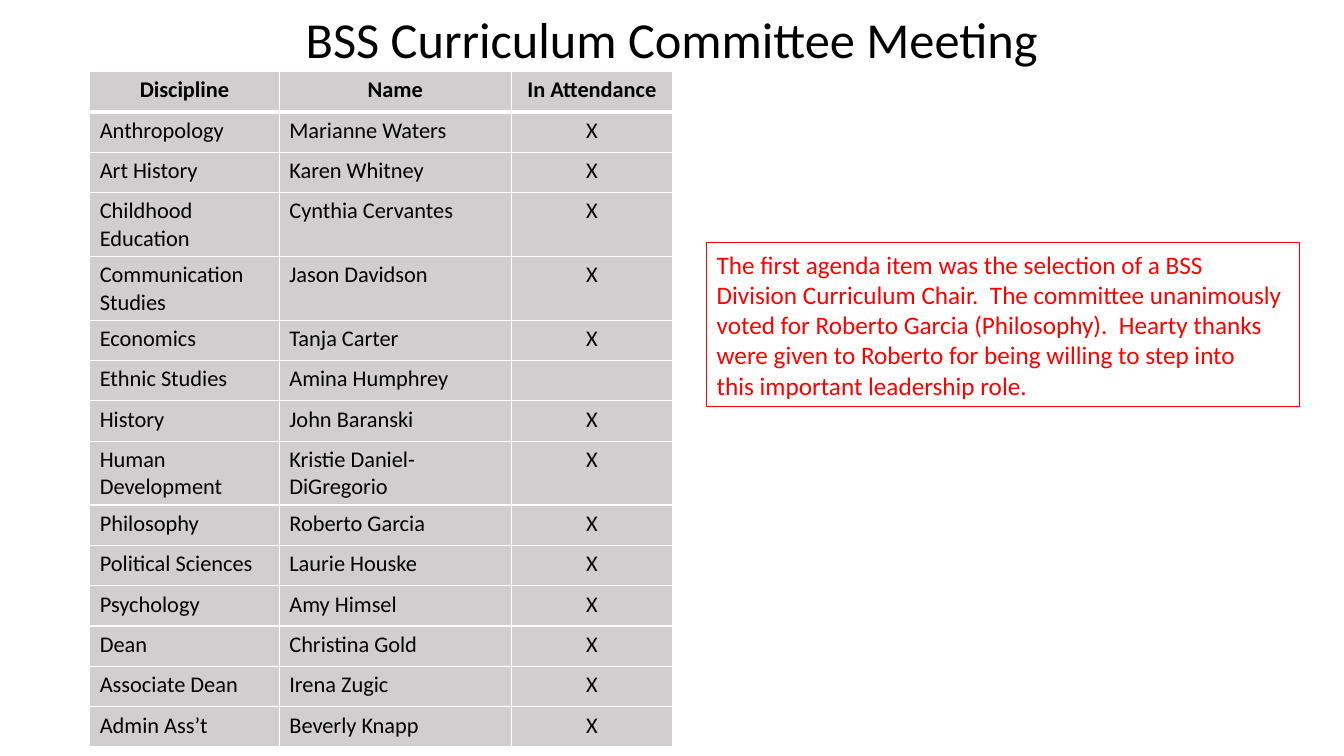
from lxml import etree
from pptx import Presentation
from pptx.dml.color import RGBColor
from pptx.enum.shapes import MSO_SHAPE
from pptx.enum.text import MSO_ANCHOR, MSO_AUTO_SIZE, PP_ALIGN
from pptx.oxml.ns import qn
from pptx.util import Inches, Pt

BLACK = RGBColor(0x00, 0x00, 0x00)
WHITE = RGBColor(0xFF, 0xFF, 0xFF)
RED = RGBColor(0xFF, 0x00, 0x00)
GREY = RGBColor(0xD0, 0xCE, 0xCE)
FONT = "Calibri"
LEFT, CENTER = PP_ALIGN.LEFT, PP_ALIGN.CENTER
BOTTOM, MIDDLE = MSO_ANCHOR.BOTTOM, MSO_ANCHOR.MIDDLE
GROW = MSO_AUTO_SIZE.SHAPE_TO_FIT_TEXT
RECTANGLE = MSO_SHAPE.RECTANGLE

TITLE = "BSS Curriculum Committee Meeting"
HEADINGS = ("Discipline", "Name", "In Attendance")
MEMBERS = [
    ("Anthropology", "Marianne Waters", "X"),
    ("Art History", "Karen Whitney", "X"),
    ("Childhood Education", "Cynthia Cervantes", "X"),
    ("Communication Studies", "Jason Davidson", "X"),
    ("Economics", "Tanja Carter", "X"),
    ("Ethnic Studies", "Amina Humphrey", ""),
    ("History", "John Baranski", "X"),
    ("Human Development", "Kristie Daniel-DiGregorio", "X"),
    ("Philosophy", "Roberto Garcia", "X"),
    ("Political Sciences", "Laurie Houske", "X"),
    ("Psychology", "Amy Himsel", "X"),
    ("Dean", "Christina Gold", "X"),
    ("Associate Dean", "Irena Zugic", "X"),
    ("Admin Ass’t", "Beverly Knapp", "X"),
]
TWO_LINE_DISCIPLINES = {"Childhood Education", "Communication Studies", "Human Development"}
COLUMN_WIDTHS = (1.88, 2.3, 1.6)
ROW_HEIGHT, TWO_LINE_HEIGHT = 0.4, 0.62
AGENDA_LINES = [
    "The first agenda item was the selection of a BSS",
    "Division Curriculum Chair.  The committee unanimously",
    "voted for Roberto Garcia (Philosophy).  Hearty thanks",
    "were given to Roberto for being willing to step into",
    "this important leadership role.",
]


def format_text(text_frame, size, color, align=LEFT, bold=False):
    for paragraph in text_frame.paragraphs:
        paragraph.alignment = align
        for run in paragraph.runs:
            run.font.name = FONT
            run.font.size = Pt(size)
            run.font.bold = bold
            run.font.color.rgb = color


def set_borders(cell, top, bottom):
    """Draw white cell borders; top and bottom are widths in points."""
    properties = cell._tc.get_or_add_tcPr()
    widths = {"a:lnL": 1, "a:lnR": 1, "a:lnT": top, "a:lnB": bottom}
    for position, (tag, width) in enumerate(widths.items()):
        border = etree.Element(qn(tag), w=str(Pt(width)))
        fill = etree.SubElement(border, qn("a:solidFill"))
        etree.SubElement(fill, qn("a:srgbClr"), val=str(WHITE))
        properties.insert(position, border)


def add_title(slide):
    title = slide.shapes.add_textbox(Inches(2.28), Inches(0.09), Inches(8.77), Inches(0.65))
    frame = title.text_frame
    frame.word_wrap = True
    frame.vertical_anchor = BOTTOM
    frame.text = TITLE
    frame.paragraphs[0].line_spacing = 0.9
    format_text(frame, 36, BLACK, CENTER)


def add_attendance_table(slide):
    rows = [HEADINGS, *MEMBERS]
    heights = [TWO_LINE_HEIGHT if row[0] in TWO_LINE_DISCIPLINES else ROW_HEIGHT for row in rows]
    table = slide.shapes.add_table(
        len(rows), len(HEADINGS), Inches(0.89), Inches(0.71),
        Inches(sum(COLUMN_WIDTHS)), Inches(sum(heights))).table
    table.horz_banding = False
    for column, width in zip(table.columns, COLUMN_WIDTHS):
        column.width = Inches(width)
    for r, (row, height) in enumerate(zip(rows, heights)):
        table.rows[r].height = Inches(height)
        is_heading = r == 0
        for c, text in enumerate(row):
            cell = table.cell(r, c)
            cell.text = text
            align = CENTER if is_heading or c == 2 else LEFT
            format_text(cell.text_frame, 16, BLACK, align, is_heading)
            cell.fill.solid()
            cell.fill.fore_color.rgb = GREY
            set_borders(cell, top=3 if r == 1 else 1, bottom=3 if is_heading else 1)


def add_agenda_note(slide):
    note = slide.shapes.add_shape(
        RECTANGLE, Inches(7.01), Inches(2.41), Inches(5.88), Inches(1.62))
    note.shadow.inherit = False
    note.fill.background()
    note.line.color.rgb = RED
    note.line.width = Pt(0.75)
    frame = note.text_frame
    frame.word_wrap = False
    frame.auto_size = GROW
    frame.vertical_anchor = MIDDLE
    frame.text = "\n".join(AGENDA_LINES)
    format_text(frame, 18, RED)


def main():
    presentation = Presentation()
    presentation.slide_width = Inches(13.33)
    presentation.slide_height = Inches(7.5)
    slide = presentation.slides.add_slide(presentation.slide_layouts[6])
    add_title(slide)
    add_attendance_table(slide)
    add_agenda_note(slide)
    presentation.save("out.pptx")


if __name__ == "__main__":
    main()
